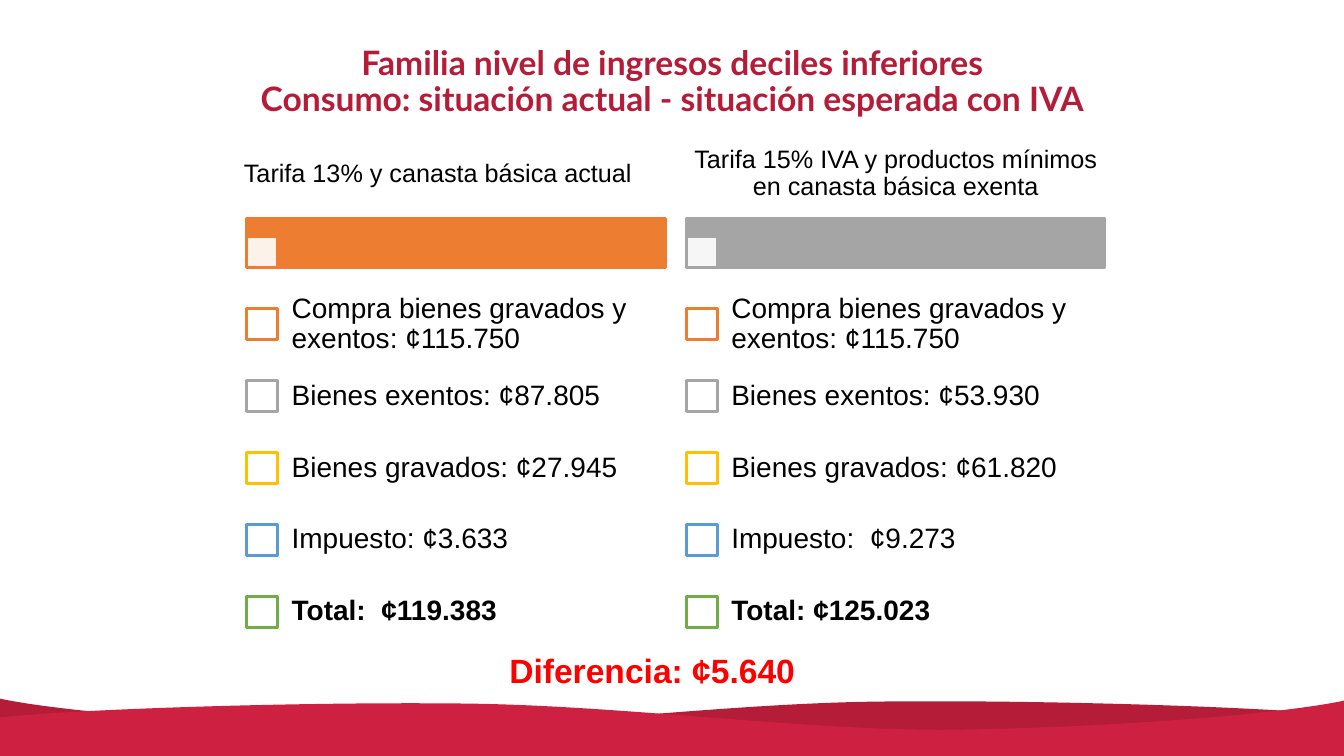
from lxml.etree import Element
from lxml.etree import SubElement
from pptx import Presentation
from pptx.dml.color import RGBColor
from pptx.enum.shapes import MSO_SHAPE
from pptx.enum.text import MSO_ANCHOR, PP_ALIGN
from pptx.oxml.ns import qn
from pptx.util import Cm, Pt

WHITE = RGBColor(0xFF, 0xFF, 0xFF)
BLACK = RGBColor(0x00, 0x00, 0x00)
RED = RGBColor(0xFF, 0x00, 0x00)
WINE = RGBColor(0xB4, 0x1C, 0x38)
CRIMSON = RGBColor(0xCE, 0x21, 0x42)
ORANGE = RGBColor(0xED, 0x7D, 0x31)
GRAY = RGBColor(0xA5, 0xA5, 0xA5)
GOLD = RGBColor(0xFF, 0xC0, 0x00)
BLUE = RGBColor(0x5B, 0x9B, 0xD5)
GREEN = RGBColor(0x70, 0xAD, 0x47)

WIDTH, HEIGHT = 33.87, 19.05
COLUMN_WIDTH = 10.55
SQUARE = 0.78
ROW_TOP, ROW_HEIGHT = 7.27, 1.81
ROW_COLORS = [ORANGE, GRAY, GOLD, BLUE, GREEN]

# Bezier points of the wave's crest, from right to left
CREST = [
    (33.87, 18.03), (31.9, 17.81), (26.06, 17.63), (22.1, 17.68),
    (18.16, 17.73), (13.79, 18.34), (10.11, 18.34),
    (6.43, 18.31), (1.73, 17.98), (-0.03, 17.6),
]

# Column left, heading left, heading top, color, heading, rows
COLUMNS = [
    (6.22, 5.85, 3.28, ORANGE, "Tarifa 13% y canasta básica actual ",
     ["Compra bienes gravados y exentos: ¢115.750", "Bienes exentos: ¢87.805",
      "Bienes gravados: ¢27.945", "Impuesto: ¢3.633", "Total:  ¢119.383"]),
    (17.3, 17.3, 3.26, GRAY,
     "Tarifa 15% IVA y productos mínimos en canasta básica exenta",
     ["Compra bienes gravados y exentos: ¢115.750", "Bienes exentos: ¢53.930",
      "Bienes gravados: ¢61.820", "Impuesto:  ¢9.273", "Total: ¢125.023"]),
]


class SlideBuilder:
    def __init__(self, page, font="Arial"):
        self.page = page
        self.font = font

    def wave(self, crest, color):
        """Fill the area between the crest and the bottom of the slide."""
        points = [(Cm(x), Cm(y)) for x, y in crest]
        corners = [(points[-1][0], Cm(HEIGHT)), (points[0][0], Cm(HEIGHT))]
        builder = self.page.shapes.build_freeform(*points[0])
        builder.add_line_segments(points[3::3] + corners, close=True)
        shape = builder.convert_to_shape()
        shape.shadow.inherit = False
        shape.fill.solid()
        shape.fill.fore_color.rgb = color
        shape.line.fill.background()
        self.bend(shape, points)

    def bend(self, shape, points):
        """Turn the first straight segments of a freeform into Bezier curves."""
        segments = list(shape._element.iter(qn("a:lnTo")))
        for segment, first in zip(segments, range(1, len(points), 3)):
            curve = Element(qn("a:cubicBezTo"))
            for x, y in points[first:first + 3]:
                point = SubElement(curve, qn("a:pt"))
                point.set("x", str(x - shape.left))
                point.set("y", str(y - shape.top))
            segment.getparent().replace(segment, curve)

    def rectangle(self, left, top, width, height, fill, line, opacity=100):
        shape = self.page.shapes.add_shape(
            MSO_SHAPE.RECTANGLE, Cm(left), Cm(top), Cm(width), Cm(height))
        shape.shadow.inherit = False
        shape.fill.solid()
        shape.fill.fore_color.rgb = fill
        shape.line.color.rgb = line
        shape.line.width = Pt(2)
        if opacity < 100:
            color = shape.fill._xPr.find(qn("a:solidFill"))[0]
            SubElement(color, qn("a:alpha")).set("val", str(opacity * 1000))

    def text(self, left, top, width, height, lines, size, color=BLACK, bold=False,
             align=PP_ALIGN.CENTER, anchor=MSO_ANCHOR.MIDDLE, font=None,
             margins=(0.25, 0.13), spacing=0.9):
        box = self.page.shapes.add_textbox(Cm(left), Cm(top), Cm(width), Cm(height))
        frame = box.text_frame
        frame.word_wrap = True
        frame.vertical_anchor = anchor
        frame.margin_left = frame.margin_right = Cm(margins[0])
        frame.margin_top = frame.margin_bottom = Cm(margins[1])
        for index, line in enumerate(lines):
            para = frame.add_paragraph() if index else frame.paragraphs[0]
            para.text = line
            para.alignment = align
            para.line_spacing = spacing
            para.font.name = font or self.font
            para.font.size = Pt(size)
            para.font.bold = bold
            para.font.color.rgb = color

    def column(self, left, heading_left, heading_top, color, heading, rows):
        self.rectangle(left, 5.51, COLUMN_WIDTH, 1.24, color, color)
        self.rectangle(left, 5.97, SQUARE, SQUARE, WHITE, color, opacity=90)
        self.text(heading_left, heading_top, COLUMN_WIDTH, 2.24, [heading], 18,
                  margins=(0.1, 0.08))
        for index, (row, row_color) in enumerate(zip(rows, ROW_COLORS)):
            top = ROW_TOP + index * ROW_HEIGHT
            self.rectangle(left, top + (ROW_HEIGHT - SQUARE) / 2, SQUARE, SQUARE,
                           WHITE, row_color)
            self.text(left + 0.73, top, COLUMN_WIDTH - 0.73, ROW_HEIGHT, [row], 20,
                      bold=row.startswith("Total"), align=PP_ALIGN.LEFT,
                      margins=(0.4, 0.4))


def main():
    deck = Presentation()
    deck.slide_width, deck.slide_height = Cm(WIDTH), Cm(HEIGHT)
    builder = SlideBuilder(deck.slides.add_slide(deck.slide_layouts[6]))
    builder.wave(CREST, WINE)
    builder.wave([(WIDTH - x, y + 0.05) for x, y in CREST], CRIMSON)
    for column in COLUMNS:
        builder.column(*column)
    builder.text(8.33, 16.24, 16.21, 1.27, ["Diferencia: ¢5.640"], 24, RED, bold=True,
                 anchor=MSO_ANCHOR.TOP, spacing=1.0)
    builder.text(3.99, 0.1, 25.91, 3.96,
                 ["Familia nivel de ingresos deciles inferiores",
                  "Consumo: situación actual - situación esperada con IVA"],
                 24, WINE, bold=True, font="Lato")
    deck.save("out.pptx")


if __name__ == "__main__":
    main()
